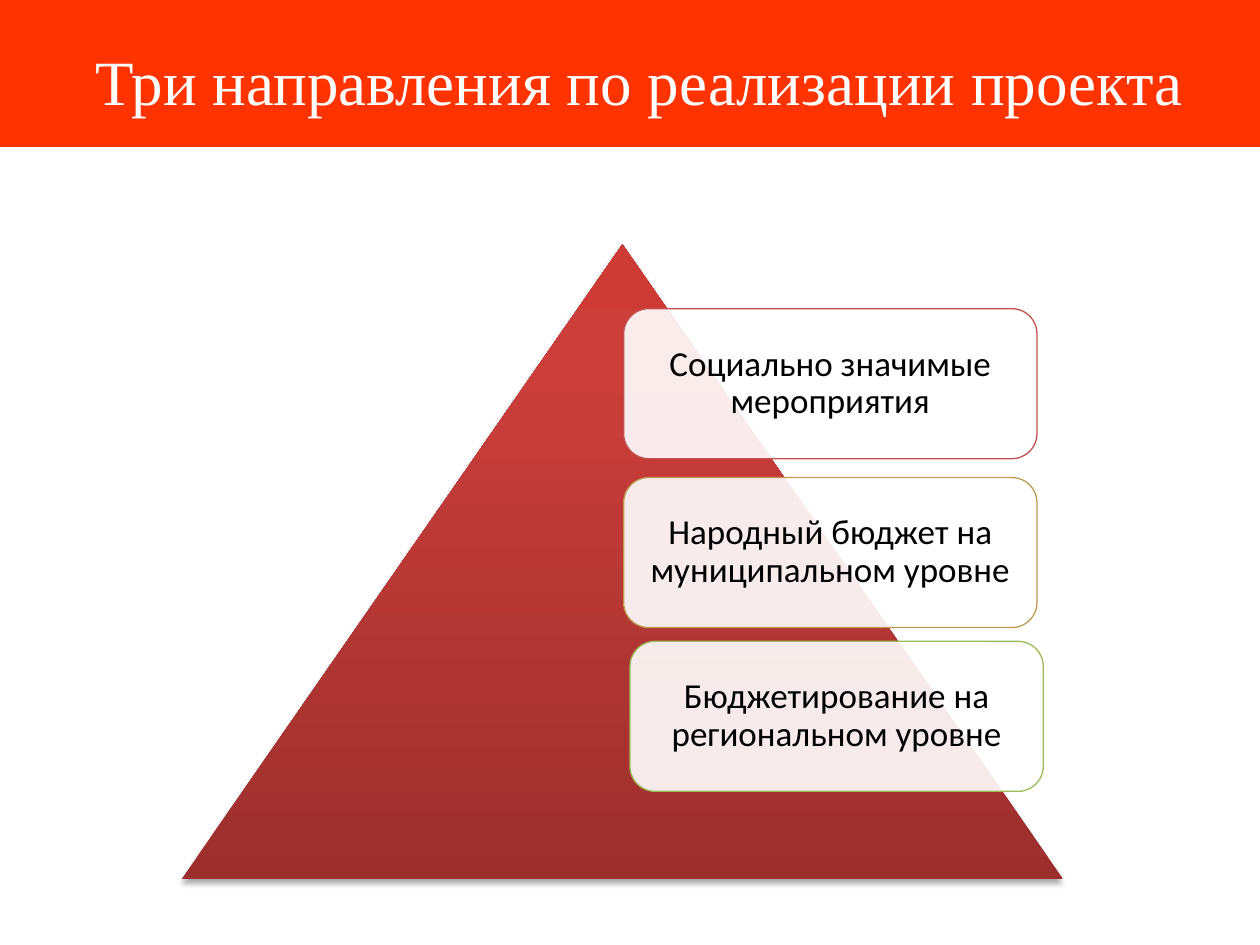
"""Builds the slide on the three directions of the project: title band, pyramid and cards."""
from dataclasses import dataclass

from lxml.etree import SubElement
from pptx import Presentation
from pptx.dml.color import RGBColor
from pptx.enum.shapes import MSO_SHAPE as Shape
from pptx.enum.text import MSO_ANCHOR as Anchor, PP_ALIGN as Align
from pptx.oxml.ns import qn
from pptx.util import Inches, Pt


@dataclass(frozen=True)
class Theme:
    band: str = "FF3300"
    white: str = "FFFFFF"
    black: str = "000000"
    pyramid: tuple = ((0, "9C2F2D"), (80, "CB3E3A"), (100, "CE3B37"))
    card_lines: tuple = ("C0504D", "BD9B53", "9BBB59")
    title_font: str = "Times New Roman"
    card_font: str = "Calibri"
    title_size: int = 36
    card_size: int = 20


def add_panel(kind, left, top, width, height, fill, line, line_width):
    panel = page.shapes.add_shape(kind, *map(Inches, (left, top, width, height)))
    panel.shadow.inherit = False
    panel.fill.solid()
    panel.fill.fore_color.rgb = RGBColor.from_string(fill)
    panel.line.color.rgb = RGBColor.from_string(line)
    panel.line.width = Pt(line_width)
    return panel


def write_text(box, text, font, size, color, margins):
    frame = box.text_frame
    frame.word_wrap = True
    frame.margin_left = frame.margin_right = Inches(margins[0])
    frame.margin_top = frame.margin_bottom = Inches(margins[1])
    frame.text = text
    para = frame.paragraphs[0]
    para.alignment = Align.CENTER
    span = para.runs[0]
    span.font.name = font
    span.font.size = Pt(size)
    span.font.color.rgb = RGBColor.from_string(color)
    return frame


theme = Theme()
WIDTH, HEIGHT = 10, 7.5
deck = Presentation()
deck.slide_width, deck.slide_height = Inches(WIDTH), Inches(HEIGHT)
page = deck.slides.add_slide(deck.slide_layouts[6])

add_panel(Shape.RECTANGLE, 0, 0, WIDTH, 1.15, theme.band, theme.band, 2)
title = page.shapes.add_textbox(*map(Inches, (0.51, 0.29, 9.13, 0.71)))
write_text(title, "Три направления по реализации проекта", theme.title_font,
           theme.title_size, theme.white, (0.1, 0.05))

pyramid = page.shapes.add_shape(
    Shape.ISOSCELES_TRIANGLE, *map(Inches, (1.44, 1.94, 0.7 * WIDTH, 5.04)))
pyramid.fill.gradient()
pyramid.fill.gradient_angle = 90
pyramid.line.fill.background()
pyramid.shadow.inherit = False
properties = pyramid._element.spPr
stops = properties.find(".//" + qn("a:gsLst"))
for stop in list(stops):
    stops.remove(stop)
for position, color in theme.pyramid:
    stop = SubElement(stops, qn("a:gs"), pos=str(position * 1000))
    SubElement(stop, qn("a:srgbClr"), val=color)
shadow = SubElement(properties.find(qn("a:effectLst")), qn("a:outerShdw"),
                    blurRad=str(Pt(3.1)), dist=str(Pt(1.8)), dir="5400000", rotWithShape="0")
shade = SubElement(shadow, qn("a:srgbClr"), val=theme.black)
SubElement(shade, qn("a:alpha"), val="35000")

CARD_WIDTH, CARD_HEIGHT = 3.28, 1.19
cards = (
    (4.95, 2.45, "Социально значимые мероприятия"),
    (4.95, 3.79, "Народный бюджет на муниципальном уровне"),
    (5, 5.09, "Бюджетирование на региональном уровне"),
)
for (left, top, text), line in zip(cards, theme.card_lines):
    card = add_panel(Shape.ROUNDED_RECTANGLE, left, top, CARD_WIDTH, CARD_HEIGHT,
                     theme.white, line, 0.75)
    tint = card._element.spPr.find(qn("a:solidFill")).find(qn("a:srgbClr"))
    SubElement(tint, qn("a:alpha"), val="90000")
    frame = write_text(card, text, theme.card_font, theme.card_size, theme.black, (0.08, 0.08))
    frame.vertical_anchor = Anchor.MIDDLE
    frame.paragraphs[0].line_spacing = 0.9

deck.save("out.pptx")
